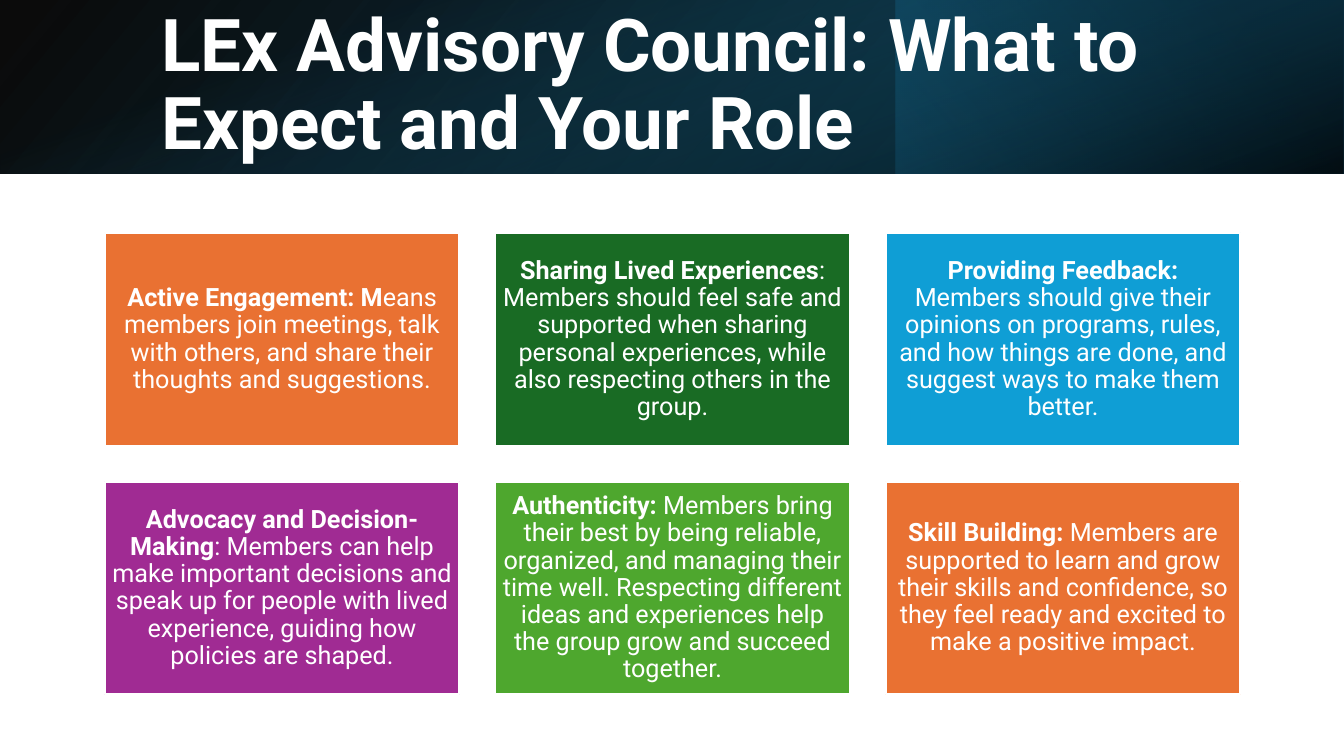
from dataclasses import dataclass

from lxml.etree import SubElement
from pptx import Presentation
from pptx.dml.color import RGBColor
from pptx.enum.shapes import MSO_SHAPE
from pptx.enum.text import MSO_ANCHOR, MSO_AUTO_SIZE, PP_ALIGN
from pptx.oxml.ns import qn
from pptx.util import Cm, Pt

FONT = "Roboto"
WHITE = RGBColor(0xFF, 0xFF, 0xFF)
BLACK = RGBColor(0x00, 0x00, 0x00)
DEEP_TEAL = RGBColor(0x10, 0x48, 0x62)
NIGHT_TEAL = RGBColor(0x0B, 0x30, 0x41)
TEAL = RGBColor(0x15, 0x60, 0x82)
ORANGE = RGBColor(0xE9, 0x71, 0x32)
DARK_GREEN = RGBColor(0x19, 0x6B, 0x24)
BLUE = RGBColor(0x0F, 0x9E, 0xD5)
PURPLE = RGBColor(0xA0, 0x2B, 0x93)
GREEN = RGBColor(0x4E, 0xA7, 0x2E)

# Lengths in centimetres
SLIDE_W, SLIDE_H = 33.87, 19.05
BAND_H = 4.37
CARD_W, CARD_H = 8.94, 5.36
CARD_LEFT, CARD_TOP = 2.64, 5.87
PITCH_X, PITCH_Y = 9.84, 6.27
COLUMNS = 3


@dataclass
class Stop:
    position: int
    color: RGBColor
    opacity: int


@dataclass
class BandLayer:
    left: float
    top: float
    width: float
    height: float
    angle: int
    stops: tuple[Stop, Stop]
    rotation: int = 0
    flip: bool = False


@dataclass
class Card:
    heading: str
    body: str
    color: RGBColor


LAYERS = [
    BandLayer(0, 0, SLIDE_W, BAND_H, 140,
              (Stop(0, BLACK, 96), Stop(100, DEEP_TEAL, 100)), flip=True),
    BandLayer(SLIDE_W * 2 / 3, 0, SLIDE_W / 3, BAND_H, 320,
              (Stop(19, NIGHT_TEAL, 68), Stop(100, TEAL, 79)), rotation=180),
    BandLayer((SLIDE_W - BAND_H) / 2, (BAND_H - SLIDE_W) / 2, BAND_H, SLIDE_W, 340,
              (Stop(23, TEAL, 0), Stop(99, BLACK, 74)), rotation=90),
]

CARDS = [
    Card("Active Engagement: M",
         "eans members join meetings, talk with others, and share their "
         "thoughts and suggestions.", ORANGE),
    Card("Sharing Lived Experiences",
         ": Members should feel safe and supported when sharing personal "
         "experiences, while also respecting others in the group.", DARK_GREEN),
    Card("Providing Feedback: ",
         "Members should give their opinions on programs, rules, and how things "
         "are done, and suggest ways to make them better.", BLUE),
    Card("Advocacy and Decision-Making",
         ": Members can help make important decisions and speak up for people "
         "with lived experience, guiding how policies are shaped.", PURPLE),
    Card("Authenticity: ",
         "Members bring their best by being reliable, organized, and managing "
         "their time well. Respecting different ideas and experiences help the "
         "group grow and succeed together.", GREEN),
    Card("Skill Building: ",
         "Members are supported to learn and grow their skills and confidence, "
         "so they feel ready and excited to make a positive impact.", ORANGE),
]


def add_rect(s, left: float, top: float, width: float, height: float):
    sp = s.shapes.add_shape(MSO_SHAPE.RECTANGLE, Cm(left), Cm(top), Cm(width), Cm(height))
    sp.shadow.inherit = False
    return sp


def style_run(r, size: int, bold: bool) -> None:
    r.font.name = FONT
    r.font.size = Pt(size)
    r.font.bold = bold
    r.font.color.rgb = WHITE


def add_layer(s, layer: BandLayer) -> None:
    sp = add_rect(s, layer.left, layer.top, layer.width, layer.height)
    sp.line.fill.background()
    sp.rotation = layer.rotation
    if layer.flip:
        sp.element.spPr.find(qn("a:xfrm")).set("flipH", "1")

    # Gradient stops with transparency
    sp.fill.gradient()
    grad = sp.element.spPr.find(qn("a:gradFill"))
    grad.set("rotWithShape", "1")
    grad.find(qn("a:lin")).set("ang", str(layer.angle * 60000))
    stop_list = grad.find(qn("a:gsLst"))
    stop_list.clear()
    for stop in layer.stops:
        gs = SubElement(stop_list, qn("a:gs"), pos=str(stop.position * 1000))
        color = SubElement(gs, qn("a:srgbClr"), val=str(stop.color))
        SubElement(color, qn("a:alpha"), val=str(stop.opacity * 1000))


def add_title(s, text: str) -> None:
    title = s.shapes.title
    title.left, title.top, title.width, title.height = Cm(3.81), Cm(0.97), Cm(27.89), Cm(2.44)
    tf = title.text_frame
    tf.text = text
    tf.auto_size = MSO_AUTO_SIZE.NONE
    tf.vertical_anchor = MSO_ANCHOR.MIDDLE
    p = tf.paragraphs[0]
    p.alignment = PP_ALIGN.LEFT
    p.line_spacing = 0.9
    style_run(p.runs[0], 52, True)
    # Bring the title in front of the band
    title.element.getparent().append(title.element)


def add_card(s, index: int, card: Card) -> None:
    row, col = divmod(index, COLUMNS)
    sp = add_rect(s, CARD_LEFT + col * PITCH_X, CARD_TOP + row * PITCH_Y, CARD_W, CARD_H)
    sp.fill.solid()
    sp.fill.fore_color.rgb = card.color
    sp.line.color.rgb = WHITE
    sp.line.width = Pt(1.5)
    tf = sp.text_frame
    tf.word_wrap = True
    tf.vertical_anchor = MSO_ANCHOR.MIDDLE
    tf.margin_left = tf.margin_right = tf.margin_top = tf.margin_bottom = Cm(0.17)
    p = tf.paragraphs[0]
    p.alignment = PP_ALIGN.CENTER
    p.line_spacing = 0.9
    for text, bold in ((card.heading, True), (card.body, False)):
        r = p.add_run()
        r.text = text
        style_run(r, 18, bold)


def main() -> None:
    prs = Presentation()
    prs.slide_width, prs.slide_height = Cm(SLIDE_W), Cm(SLIDE_H)
    s = prs.slides.add_slide(prs.slide_layouts[5])

    # Header band
    for layer in LAYERS:
        add_layer(s, layer)
    add_title(s, "LEx Advisory Council: What to Expect and Your Role")

    # Grid of expectations
    for index, card in enumerate(CARDS):
        add_card(s, index, card)

    prs.save("out.pptx")


if __name__ == "__main__":
    main()
